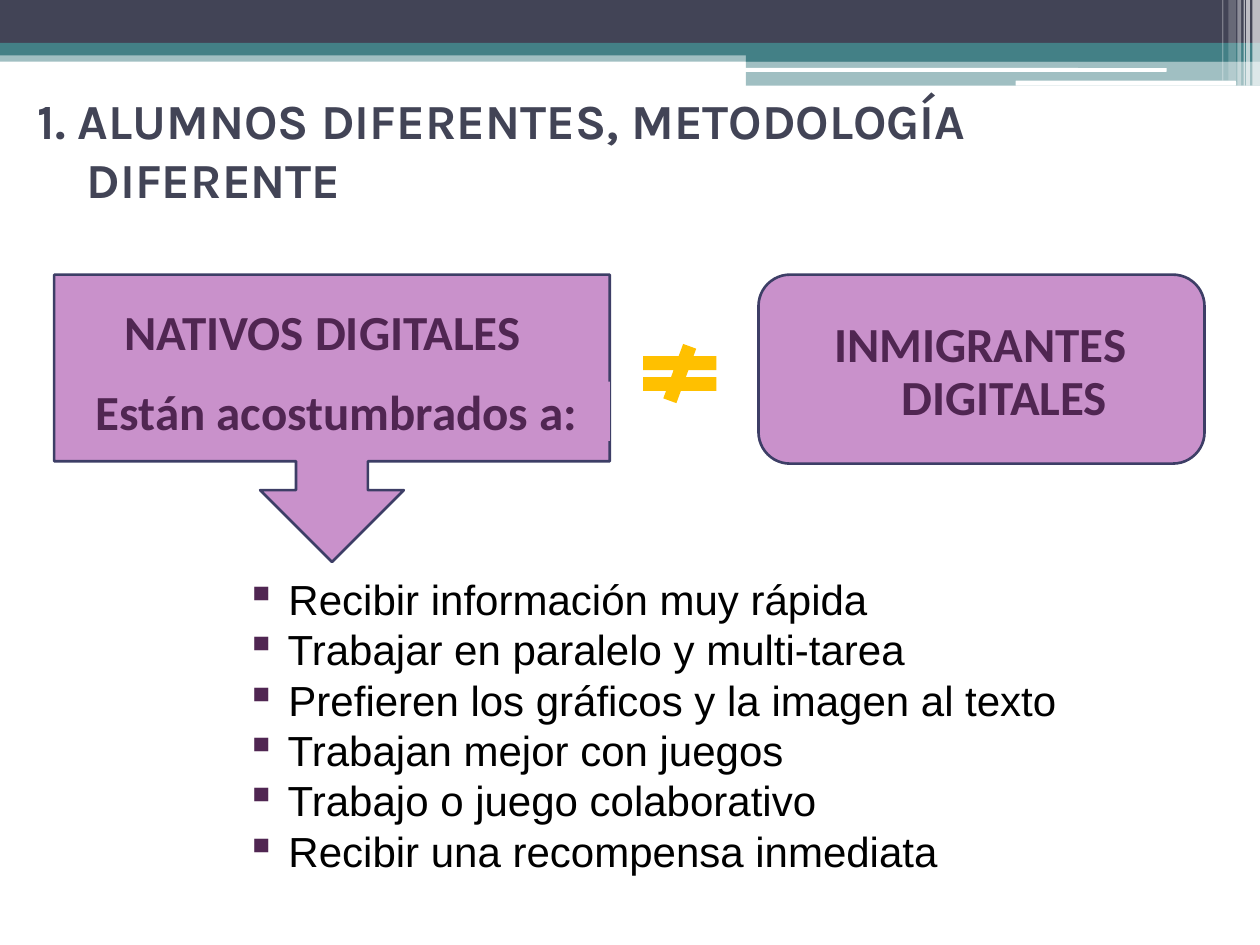
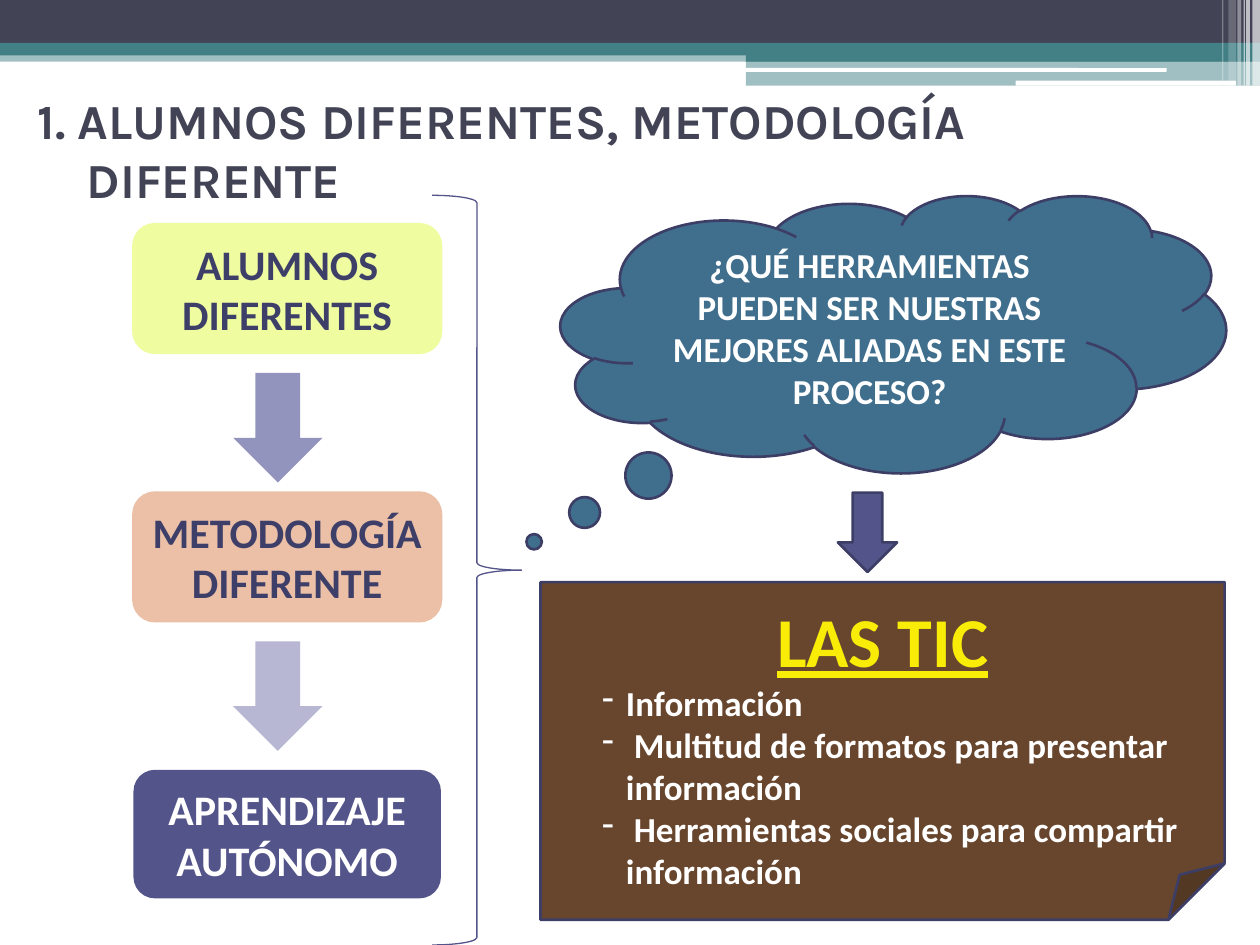
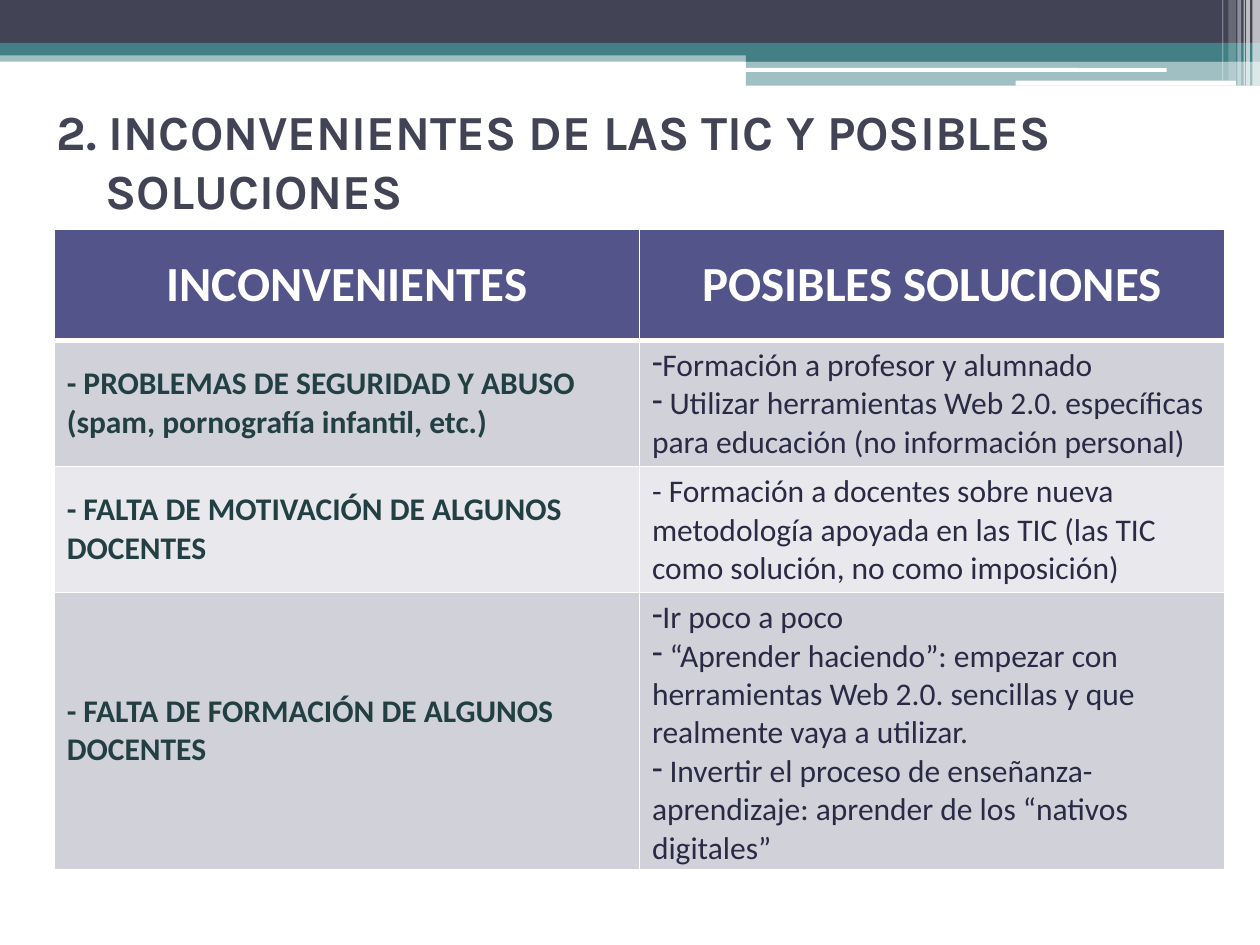
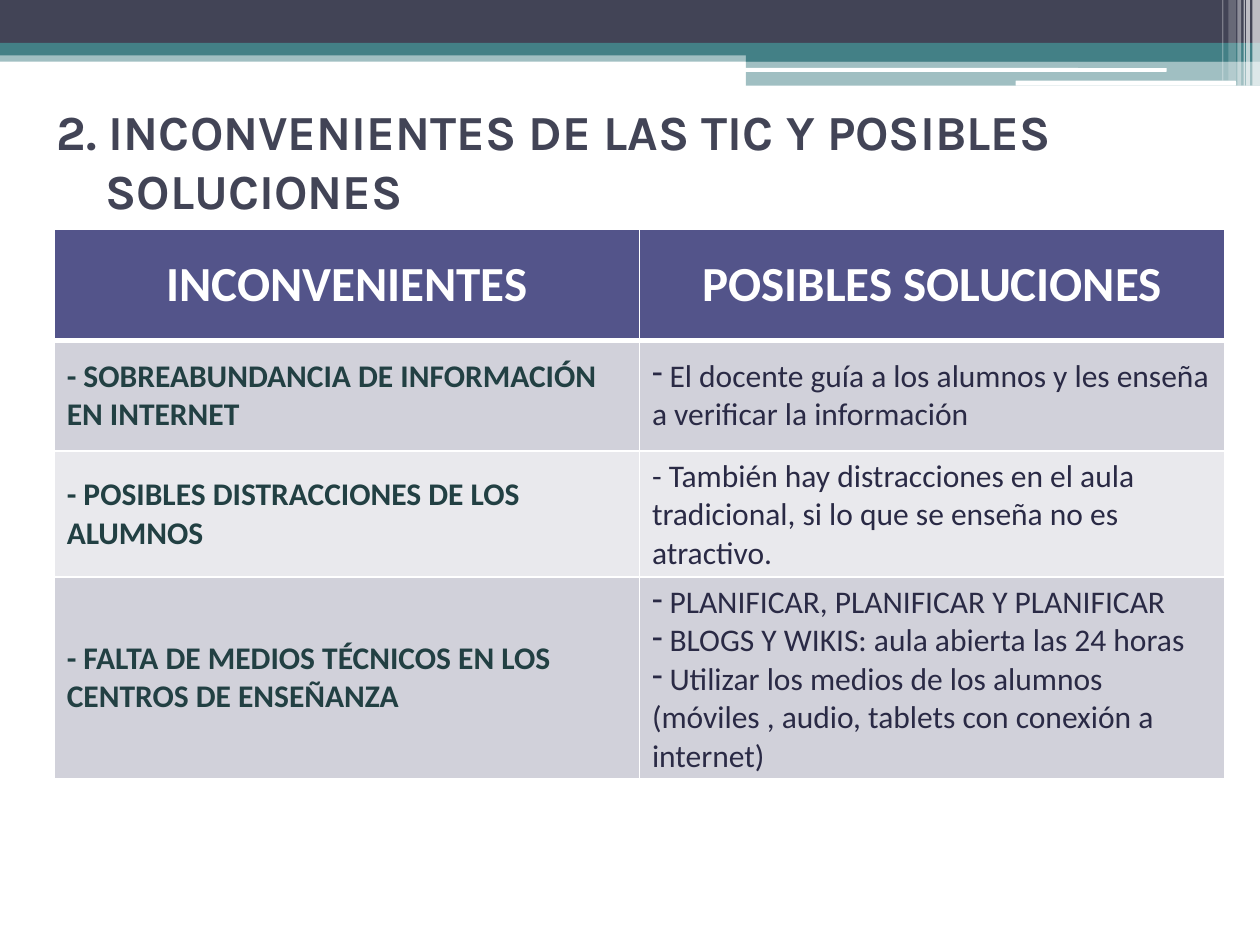
from dataclasses import dataclass, replace

from lxml import etree
from pptx import Presentation
from pptx.dml.color import RGBColor
from pptx.enum import shapes, text
from pptx.oxml import ns
from pptx.util import Inches, Pt

SHAPE = shapes.MSO_SHAPE
ALIGN = text.PP_ALIGN
ANCHOR = text.MSO_ANCHOR


class Theme:
    navy, teal, white, black = "424456", "438086", "FFFFFF", "000000"
    indigo, outline, label = "53548A", "3D3E66", "3E3F68"
    lilac, plum, amber = "C991CB", "502652", "FFC000"
    lime, peach, lavender, pale_lavender = "EFFCA0", "EBC0A7", "9394BE", "B7B7D4"
    cloud, brown, yellow = "406F8D", "68462E", "F9ED07"
    dark_row, light_row = "D1D1DA", "E9E9ED"
    problem, solution = "224043", "2A2A45"
    heading_font, body_font, list_font = "Karla", "Calibri", "Arial"
    huge, large, medium, normal, small = 40, 28, 24, 20, 18


@dataclass(frozen=True)
class TextStyle:
    size: int
    color: str
    font: str = Theme.body_font
    bold: bool = True
    underline: bool = False
    align: ALIGN = ALIGN.CENTER
    line_spacing: float = None
    margin: float = 0
    indent: float = 0
    bullet: str = None
    bullet_color: str = None


TITLE = TextStyle(Theme.large, Theme.navy, Theme.heading_font, align=ALIGN.LEFT,
                  margin=0.39, indent=-0.39)
HABITS = TextStyle(Theme.medium, Theme.black, Theme.list_font, bold=False,
                   align=ALIGN.LEFT, bullet="▪", bullet_color=Theme.plum)
GROUP_NAME = TextStyle(Theme.large, Theme.plum, line_spacing=0.9,
                       margin=0.38, indent=-0.38)
STEP = TextStyle(Theme.medium, Theme.label)
FINAL_STEP = replace(STEP, color=Theme.white)
QUESTION = TextStyle(Theme.normal, Theme.white)
TIC_HEADING = TextStyle(Theme.huge, Theme.yellow, underline=True)
TIC_ITEM = replace(QUESTION, align=ALIGN.LEFT, margin=0.58, indent=-0.19, bullet="-")
TABLE_HEADER = TextStyle(Theme.large, Theme.white)
PROBLEM = TextStyle(Theme.small, Theme.problem, align=ALIGN.LEFT)
SOLUTION = replace(PROBLEM, color=Theme.solution, bold=False)
SOLUTION_ITEM = replace(SOLUTION, bullet="-")

STUDENTS_TITLE = "1. ALUMNOS DIFERENTES, METODOLOGÍA DIFERENTE"
DRAWBACKS_TITLE = "2. INCONVENIENTES DE LAS TIC Y POSIBLES SOLUCIONES"


def add_element(parent, tag, **attributes):
    return etree.SubElement(parent, ns.qn(tag), attributes)


def box(left, top, width, height):
    return [Inches(length) for length in (left, top, width, height)]


def set_bullet(paragraph, style):
    properties = paragraph._p.get_or_add_pPr()
    properties.set("marL", str(Inches(style.margin)))
    properties.set("indent", str(Inches(style.indent)))
    if style.bullet_color:
        color = add_element(properties, "a:buClr")
        add_element(color, "a:srgbClr", val=style.bullet_color)
    if style.bullet:
        add_element(properties, "a:buChar", char=style.bullet)


def write(frame, lines, anchor=ANCHOR.MIDDLE):
    """Fill a text frame with (words, style) pairs, one paragraph each."""
    frame.word_wrap = True
    frame.vertical_anchor = anchor
    for number, (words, style) in enumerate(lines):
        paragraph = frame.add_paragraph() if number else frame.paragraphs[0]
        paragraph.alignment = style.align
        if style.line_spacing:
            paragraph.line_spacing = style.line_spacing
        set_bullet(paragraph, style)
        run = paragraph.add_run()
        run.text = words
        font = run.font
        font.name, font.size = style.font, Pt(style.size)
        font.bold, font.underline = style.bold, style.underline
        font.color.rgb = RGBColor.from_string(style.color)


def add_text(container, place, lines, anchor=ANCHOR.TOP):
    write(container.add_textbox(*box(*place)).text_frame, lines, anchor)


def add_figure(container, kind, place, fill=None, line=None, width=1.5,
               opacity=100, adjust=()):
    shape = container.add_shape(kind, *box(*place))
    shape.shadow.inherit = False
    for number, value in enumerate(adjust):
        shape.adjustments[number] = value
    if fill:
        shape.fill.solid()
        shape.fill.fore_color.rgb = RGBColor.from_string(fill)
        if opacity < 100:
            color = shape._element.spPr.find(".//" + ns.qn("a:srgbClr"))
            add_element(color, "a:alpha", val=str(opacity * 1000))
    else:
        shape.fill.background()
    if line:
        shape.line.color.rgb = RGBColor.from_string(line)
        shape.line.width = Pt(width)
    else:
        shape.line.fill.background()
    return shape


def add_bands(slide):
    for place, color, opacity in (
        ((0, 0.4, 10, 0.09), Theme.teal, 50),
        ((0, 0, 10, 0.34), Theme.navy, 100),
        ((0, 0.34, 10, 0.1), Theme.teal, 100),
        ((5.92, 0.39, 4.08, 0.1), Theme.teal, 100),
        ((5.92, 0.48, 4.08, 0.2), Theme.teal, 50),
    ):
        add_figure(slide.shapes, SHAPE.RECTANGLE, place, color, opacity=opacity)
    for place in ((5.91, 0.54, 3.35, 0.03), (8.06, 0.64, 1.75, 0.04)):
        add_figure(slide.shapes, SHAPE.ROUNDED_RECTANGLE, place, Theme.white)
    for left, width, height, opacity in (
        (9.94, 0.06, 0.68, 65), (9.89, 0.03, 0.68, 65), (9.87, 0.01, 0.68, 60),
        (9.82, 0.03, 0.68, 40), (9.75, 0.06, 0.64, 20), (9.7, 0.01, 0.64, 30),
    ):
        add_figure(slide.shapes, SHAPE.RECTANGLE, (left, 0, width, height),
                   Theme.white, opacity=opacity)


def start_slide(presentation, title, title_place):
    slide = presentation.slides.add_slide(presentation.slide_layouts[6])
    add_bands(slide)
    add_text(slide.shapes, title_place, [(title, TITLE)], ANCHOR.MIDDLE)
    return slide


def set_borders(cell, **widths):
    """Draw white cell borders; sides are L, R, T and B, widths in points."""
    properties = cell._tc.get_or_add_tcPr()
    for side, width in widths.items():
        line = add_element(properties, f"a:ln{side}", w=str(Pt(width)))
        fill = add_element(line, "a:solidFill")
        add_element(fill, "a:srgbClr", val=Theme.white)


def add_drawbacks_table(slide, height, rows):
    header = ([("INCONVENIENTES", TABLE_HEADER)],
              [("POSIBLES SOLUCIONES", TABLE_HEADER)])
    body = [([(problem, PROBLEM)], solutions) for problem, solutions in rows]
    frame = slide.shapes.add_table(len(rows) + 1, 2, *box(0.43, 1.82, 9.29, height))
    table = frame.table
    for row in table.rows:
        row.height = Inches(0.88)
    frame.height = Inches(height)
    for row, contents in enumerate([header, *body]):
        if row == 0:
            color = Theme.indigo
        else:
            color = Theme.dark_row if row % 2 else Theme.light_row
        for column, lines in enumerate(contents):
            cell = table.cell(row, column)
            set_borders(cell, L=1, R=1, T=3 if row == 1 else 1, B=3 if row == 0 else 1)
            cell.fill.solid()
            cell.fill.fore_color.rgb = RGBColor.from_string(color)
            cell.vertical_anchor = ANCHOR.MIDDLE
            write(cell.text_frame, lines)


def build_natives_slide(presentation):
    slide = start_slide(presentation, STUDENTS_TITLE, (0.2, 0.6, 9.51, 1.17))
    habits = (
        " Recibir información muy rápida",
        " Trabajar en paralelo y multi-tarea",
        " Prefieren los gráficos y la imagen al texto",
        " Trabajan mejor con juegos",
        " Trabajo o juego colaborativo",
        " Recibir una recompensa inmediata",
    )
    add_text(slide.shapes, (1.85, 4.5, 8.98, 0.59), [(habit, HABITS) for habit in habits])

    immigrants = slide.shapes.add_group_shape().shapes
    add_figure(immigrants, SHAPE.ROUNDED_RECTANGLE, (6.02, 2.18, 3.54, 1.5),
               Theme.lilac, Theme.outline)
    add_text(immigrants, (6.1, 2.49, 3.36, 0.86), [("INMIGRANTES DIGITALES", GROUP_NAME)])

    natives = slide.shapes.add_group_shape().shapes
    add_figure(natives, SHAPE.DOWN_ARROW_CALLOUT, (0.43, 2.18, 4.41, 2.28),
               Theme.lilac, Theme.outline)
    for place, words in (
        ((0.81, 2.4, 3.5, 0.47), "NATIVOS DIGITALES"),
        ((0.5, 3.03, 4.34, 0.47), "Están acostumbrados a:"),
    ):
        label = add_figure(natives, SHAPE.RECTANGLE, place, Theme.lilac)
        write(label.text_frame, [(words, GROUP_NAME)], ANCHOR.TOP)

    add_figure(slide.shapes, SHAPE.MATH_NOT_EQUAL, (5, 2.73, 0.79, 0.47), Theme.amber)


def build_tools_slide(presentation):
    slide = start_slide(presentation, STUDENTS_TITLE, (0.2, 0.6, 9.51, 1.17))
    for top, words, fill, line, style in (
        (1.78, "ALUMNOS DIFERENTES", Theme.lime, Theme.lime, STEP),
        (3.91, "METODOLOGÍA DIFERENTE", Theme.peach, Theme.peach, STEP),
        (6.11, "APRENDIZAJE AUTÓNOMO", Theme.indigo, None, FINAL_STEP),
    ):
        step = add_figure(slide.shapes, SHAPE.ROUNDED_RECTANGLE,
                          (1.06, top, 2.44, 1.02), fill, line)
        write(step.text_frame, [(words, style)])
    for top, color in ((2.96, Theme.lavender), (5.09, Theme.pale_lavender)):
        add_figure(slide.shapes, SHAPE.DOWN_ARROW, (1.85, top, 0.71, 0.87), color)
    add_figure(slide.shapes, SHAPE.RIGHT_BRACE, (3.43, 1.55, 0.71, 5.95),
               line=Theme.indigo, width=0.75)

    cloud = add_figure(slide.shapes, SHAPE.CLOUD_CALLOUT, (4.45, 1.55, 5.28, 2.2),
                       Theme.cloud, Theme.outline, adjust=(-0.54, 0.75))
    write(cloud.text_frame, [(
        "¿QUÉ HERRAMIENTAS PUEDEN SER NUESTRAS MEJORES ALIADAS EN ESTE PROCESO?",
        QUESTION)])
    add_figure(slide.shapes, SHAPE.DOWN_ARROW, (6.65, 3.91, 0.47, 0.63),
               Theme.indigo, Theme.outline)

    note = add_figure(slide.shapes, SHAPE.FOLDED_CORNER, (4.29, 4.62, 5.43, 2.68),
                      Theme.brown, Theme.outline)
    note.text_frame.margin_top = Inches(0.12)
    note.text_frame.margin_bottom = 0
    write(note.text_frame, [
        ("LAS TIC", TIC_HEADING),
        ("Información", TIC_ITEM),
        (" Multitud de formatos para presentar información", TIC_ITEM),
        (" Herramientas sociales para compartir información", TIC_ITEM),
    ], ANCHOR.TOP)


def build_drawbacks_slide(presentation, height, rows):
    slide = start_slide(presentation, DRAWBACKS_TITLE, (0.35, 0.69, 9.65, 1.17))
    add_drawbacks_table(slide, height, rows)


PEOPLE_DRAWBACKS = [
    ("- PROBLEMAS DE SEGURIDAD Y ABUSO (spam, pornografía infantil, etc.)", [
        ("Formación a profesor y alumnado", SOLUTION_ITEM),
        (" Utilizar herramientas Web 2.0. específicas para educación "
         "(no información personal)", SOLUTION_ITEM),
    ]),
    ("- FALTA DE MOTIVACIÓN DE ALGUNOS DOCENTES", [
        ("- Formación a docentes sobre nueva metodología apoyada en las TIC "
         "(las TIC como solución, no como imposición)", SOLUTION),
    ]),
    ("- FALTA DE FORMACIÓN DE ALGUNOS DOCENTES", [
        ("Ir poco a poco", SOLUTION_ITEM),
        (" “Aprender haciendo”: empezar con herramientas Web 2.0. sencillas "
         "y que realmente vaya a utilizar.", SOLUTION_ITEM),
        (" Invertir el proceso de enseñanza-aprendizaje: aprender de los "
         "“nativos digitales”", SOLUTION_ITEM),
    ]),
]

RESOURCE_DRAWBACKS = [
    ("- SOBREABUNDANCIA DE INFORMACIÓN EN INTERNET", [
        (" El docente guía a los alumnos y les enseña a verificar la información",
         SOLUTION_ITEM),
    ]),
    ("- POSIBLES DISTRACCIONES DE LOS ALUMNOS", [
        ("- También hay distracciones en el aula tradicional, si lo que se "
         "enseña no es atractivo.", SOLUTION),
    ]),
    ("- FALTA DE MEDIOS TÉCNICOS EN LOS CENTROS DE ENSEÑANZA", [
        (" PLANIFICAR, PLANIFICAR Y PLANIFICAR", SOLUTION_ITEM),
        (" BLOGS Y WIKIS: aula abierta las 24 horas", SOLUTION_ITEM),
        (" Utilizar los medios de los alumnos (móviles , audio, tablets con "
         "conexión a internet)", SOLUTION_ITEM),
    ]),
]


def main():
    presentation = Presentation()
    presentation.slide_width, presentation.slide_height = Inches(10), Inches(7.5)
    build_natives_slide(presentation)
    build_tools_slide(presentation)
    build_drawbacks_slide(presentation, 5.08, PEOPLE_DRAWBACKS)
    build_drawbacks_slide(presentation, 4.66, RESOURCE_DRAWBACKS)
    presentation.save("out.pptx")


if __name__ == "__main__":
    main()
